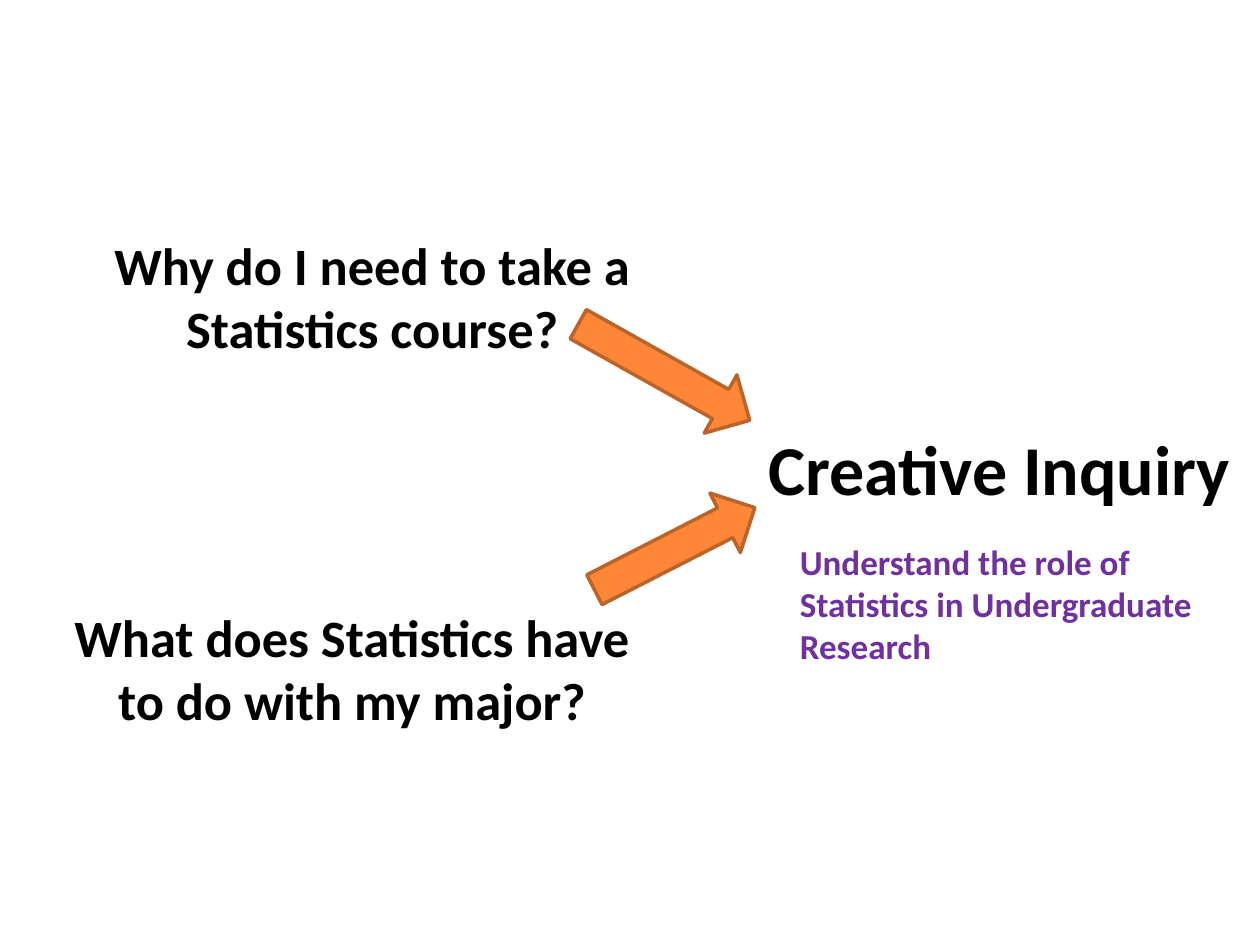
from pptx import Presentation
from pptx.dml.color import RGBColor
from pptx.enum.shapes import MSO_SHAPE
from pptx.enum.text import MSO_ANCHOR, MSO_AUTO_SIZE, PP_ALIGN
from pptx.util import Inches, Pt

COLORS = {"text": "000000", "goal": "7030A0", "arrow": "FE8637", "arrow_line": "BC6329"}

TITLE = {"text": "Creative Inquiry", "box": (6, 3.33, 3.91, 0.77), "size": 40,
         "color": "text", "align": PP_ALIGN.LEFT, "wrap": False}
QUESTION = {"size": 30, "color": "text", "align": PP_ALIGN.CENTER, "wrap": True}
TEXTS = [
    {"text": "Why do I need to take a Statistics course?",
     "box": (0.33, 1.8, 5.25, 1.08), **QUESTION},
    {"text": "What does Statistics have to do with my major?",
     "box": (0.42, 4.75, 4.75, 1.08), **QUESTION},
    {"text": "Understand the role of Statistics in Undergraduate Research",
     "box": (6.25, 4.24, 3.5, 1.11), "size": 20, "color": "goal",
     "align": PP_ALIGN.LEFT, "wrap": True},
]
ARROWS = [  # box, rotation in degrees
    ((4.49, 2.69, 1.56, 0.53), 29.3),
    ((4.64, 4.09, 1.43, 0.53), 332.9),
]


def color(name):
    return RGBColor.from_string(COLORS[name])


def place(shape, box):
    for side, value in zip(("left", "top", "width", "height"), box):
        setattr(shape, side, Inches(value))


def write(shape, content):
    place(shape, content["box"])
    frame = shape.text_frame
    frame_format = {"text": content["text"], "word_wrap": content["wrap"],
                    "auto_size": MSO_AUTO_SIZE.NONE, "vertical_anchor": MSO_ANCHOR.TOP}
    for name, value in frame_format.items():
        setattr(frame, name, value)
    paragraph = frame.paragraphs[0]
    paragraph.alignment = content["align"]
    font = paragraph.runs[0].font
    for name, value in {"name": "Calibri", "size": Pt(content["size"]), "bold": True}.items():
        setattr(font, name, value)
    font.color.rgb = color(content["color"])


def add_arrow(slide, box, rotation):
    arrow = slide.shapes.add_shape(MSO_SHAPE.RIGHT_ARROW, *map(Inches, box))
    arrow.rotation = rotation
    arrow.shadow.inherit = False
    arrow.fill.solid()
    arrow.fill.fore_color.rgb = color("arrow")
    arrow.line.color.rgb = color("arrow_line")
    arrow.line.width = Pt(2)


def main():
    presentation = Presentation()
    presentation.slide_width, presentation.slide_height = Inches(10), Inches(7.5)
    slide = presentation.slides.add_slide(presentation.slide_layouts.get_by_name("Title Only"))
    write(slide.shapes.title, TITLE)
    for content in TEXTS:
        write(slide.shapes.add_textbox(*map(Inches, content["box"])), content)
    for box, rotation in ARROWS:
        add_arrow(slide, box, rotation)
    presentation.save("out.pptx")


if __name__ == "__main__":
    main()
